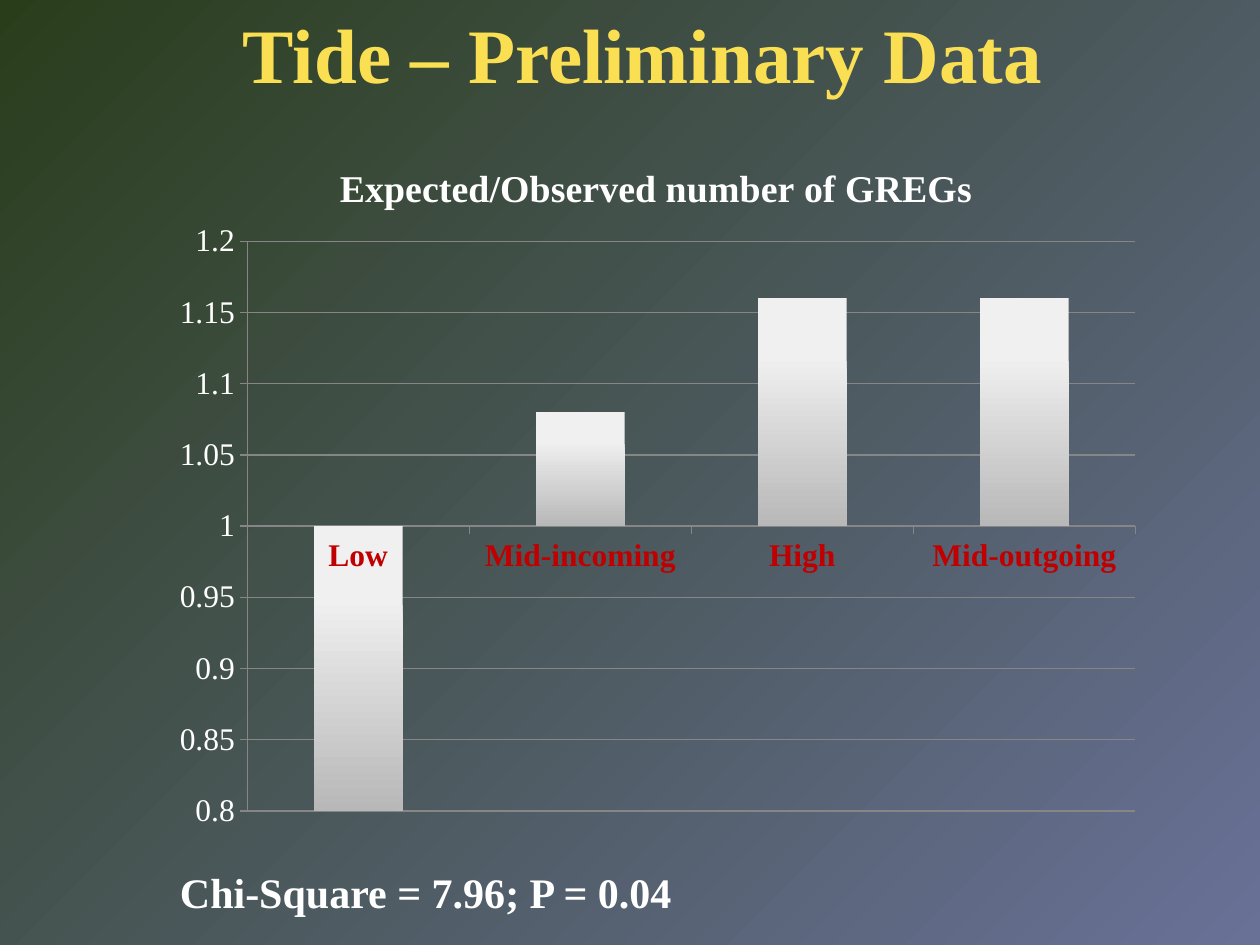
from dataclasses import dataclass

from lxml.etree import SubElement
from pptx import Presentation
from pptx.chart.data import CategoryChartData
from pptx.dml.color import RGBColor
from pptx.enum.chart import XL_CHART_TYPE, XL_TICK_MARK
from pptx.oxml.ns import qn
from pptx.util import Inches, Pt

FONT = "Times New Roman"
YELLOW = RGBColor(0xFB, 0xDF, 0x53)
WHITE = RGBColor(0xFF, 0xFF, 0xFF)
RED = RGBColor(0xC0, 0x00, 0x00)
GREY = RGBColor(0x86, 0x86, 0x86)
BAR_TOP = RGBColor(0xF0, 0xF0, 0xF0)
BAR_BOTTOM = RGBColor(0xB8, 0xB8, 0xB8)
GREEN = RGBColor(0x2A, 0x3D, 0x1B)
VIOLET = RGBColor(0x69, 0x71, 0x97)


@dataclass
class Label:
    text: str
    left: float
    top: float
    width: float
    height: float
    size: int
    color: RGBColor
    wrap: bool


LABELS = [
    Label("Tide – Preliminary Data", 1.83, 0, 6.61, 0.84, 44, YELLOW, False),
    Label("Chi-Square = 7.96; P = 0.04", 1.33, 6.83, 5.5, 0.5, 24, WHITE, True),
]
TIDES = {"Low": 0.71, "Mid-incoming": 1.08, "High": 1.16, "Mid-outgoing": 1.16}
PLOT_LAYOUT = {"x": 0.09, "y": 0.15, "w": 0.89, "h": 0.81}


def set_font(font, size: float, color: RGBColor, bold: bool) -> None:
    font.name = FONT
    font.size = Pt(size)
    font.bold = bold
    font.color.rgb = color


def set_gradient(fill, start: RGBColor, end: RGBColor, angle: int, offset: float = 0) -> None:
    fill.gradient()
    fill.gradient_angle = angle
    for stop, color, position in zip(fill.gradient_stops, (start, end), (offset, 1)):
        stop.color.rgb = color
        stop.position = position


def add_label(s, label: Label) -> None:
    box = s.shapes.add_textbox(
        Inches(label.left), Inches(label.top), Inches(label.width), Inches(label.height)
    )
    tf = box.text_frame
    tf.word_wrap = label.wrap
    r = tf.paragraphs[0].add_run()
    r.text = label.text
    set_font(r.font, label.size, label.color, True)


def set_plot_layout(chart) -> None:
    area = chart._chartSpace.chart.plotArea
    for old in area.findall(qn("c:layout")):
        area.remove(old)
    layout = SubElement(area, qn("c:layout"))
    area.insert(0, layout)
    manual = SubElement(layout, qn("c:manualLayout"))
    settings = {"layoutTarget": "inner", "xMode": "edge", "yMode": "edge", **PLOT_LAYOUT}
    for tag, value in settings.items():
        SubElement(manual, qn(f"c:{tag}")).set("val", str(value))


def style_axis(axis, color: RGBColor, bold: bool) -> None:
    set_font(axis.tick_labels.font, 18, color, bold)
    axis.major_tick_mark = XL_TICK_MARK.OUTSIDE
    axis.minor_tick_mark = XL_TICK_MARK.NONE
    axis.format.line.color.rgb = GREY
    axis.format.line.width = Pt(0.75)


def add_tide_chart(s) -> None:
    data = CategoryChartData()
    data.categories = list(TIDES)
    data.add_series("Series 1", list(TIDES.values()))
    chart = s.shapes.add_chart(
        XL_CHART_TYPE.COLUMN_CLUSTERED,
        Inches(1.25), Inches(1.08), Inches(7.92), Inches(5.58), data,
    ).chart
    chart.font.name = FONT
    chart.font.size = Pt(18)
    chart.has_legend = False
    chart.has_title = True
    r = chart.chart_title.text_frame.paragraphs[0].add_run()
    r.text = "Expected/Observed number of GREGs"
    set_font(r.font, 21.6, WHITE, True)
    set_plot_layout(chart)

    style_axis(chart.category_axis, RED, True)
    values = chart.value_axis
    style_axis(values, WHITE, False)
    values.minimum_scale = 0.8
    values.maximum_scale = 1.2
    values.major_unit = 0.05
    values.crosses_at = 1
    values.tick_labels.number_format = "General"
    values.tick_labels.number_format_is_linked = False
    values.has_major_gridlines = True
    values.major_gridlines.format.line.color.rgb = GREY
    values.major_gridlines.format.line.width = Pt(0.75)

    plot = chart.plots[0]
    plot.gap_width = 150
    plot.vary_by_categories = False
    bars = plot.series[0]
    bars.invert_if_negative = False
    set_gradient(bars.format.fill, BAR_TOP, BAR_BOTTOM, 270, 0.25)


def main() -> None:
    prs = Presentation()
    prs.slide_width = Inches(10)
    prs.slide_height = Inches(7.5)
    s = prs.slides.add_slide(prs.slide_layouts[6])
    set_gradient(s.background.fill, GREEN, VIOLET, 315)
    add_tide_chart(s)
    for label in LABELS:
        add_label(s, label)
    prs.save("out.pptx")


if __name__ == "__main__":
    main()
